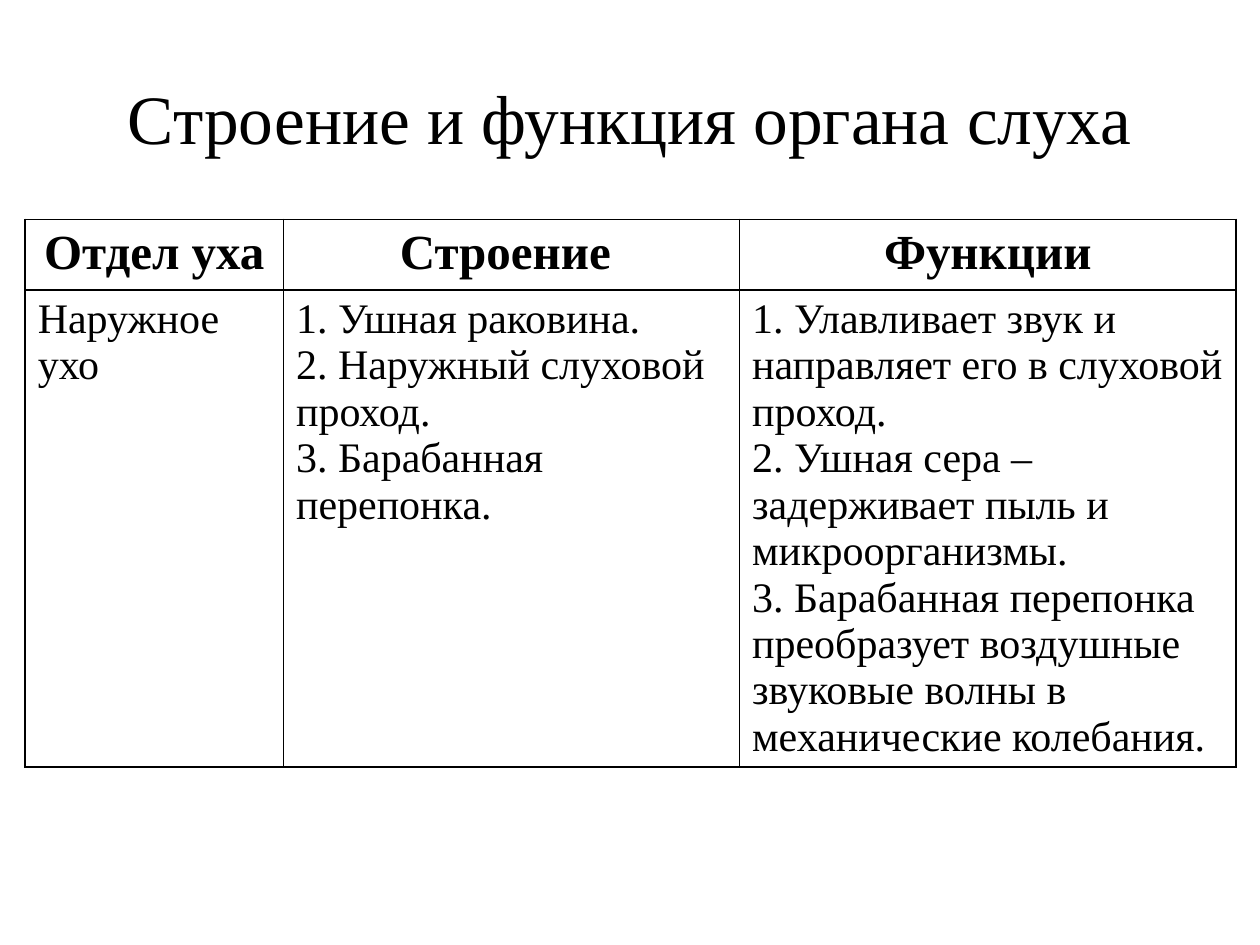
from dataclasses import dataclass

from pptx import Presentation
from pptx import util as u
from pptx.dml import color
from pptx.enum import text
from pptx.oxml import parse_xml
from pptx.oxml.ns import nsdecls


@dataclass(frozen=True)
class Theme:
    """Colours, font and type sizes of the slide."""
    ink: str = "000000"
    paper: str = "FFFFFF"
    font: str = "Times New Roman"
    title: float = 39.6
    head: float = 28
    body: float = 24
    rule: float = 1


THEME = Theme()
WIDTHS = [2.05, 3.62, 3.94]
HEIGHTS = [0.56, 3.78]
HEADS = ["Отдел уха", "Строение ", "Функции"]
OUTER = [
    ["Наружное ухо"],
    ["1. Ушная раковина.\n2. Наружный слуховой проход.\n3. Барабанная перепонка."],
    ["1. Улавливает звук и направляет его в слуховой проход.\n"
     "2. Ушная сера – задерживает пыль и микроорганизмы.",
     "3. Барабанная перепонка преобразует воздушные звуковые волны "
     "в механические колебания."],
]


def write(frame, lines, size, bold=False, align=text.PP_ALIGN.LEFT):
    """Fill a text frame with one styled paragraph per line."""
    for i, line in enumerate(lines):
        para = frame.add_paragraph() if i else frame.paragraphs[0]
        para.text = line
        para.alignment = align
        font = para.font
        font.name, font.size, font.bold = THEME.font, u.Pt(size), bold
        font.color.rgb = color.RGBColor.from_string(THEME.ink)


def frame_cell(cell):
    """Draw thin rules on all four sides of a cell and fill it."""
    props = cell._tc.get_or_add_tcPr()
    for side in ("lnL", "lnR", "lnT", "lnB"):
        props.append(parse_xml(
            f'<a:{side} {nsdecls("a")} w="{u.Pt(THEME.rule)}"><a:solidFill>'
            f'<a:srgbClr val="{THEME.ink}"/></a:solidFill></a:{side}>'))
    cell.fill.solid()
    cell.fill.fore_color.rgb = color.RGBColor.from_string(THEME.paper)


def add_title(slide, words):
    """Place and style the title."""
    title = slide.shapes.title
    title.left, title.top = u.Inches(0.5), u.Inches(0.3)
    title.width, title.height = u.Inches(9), u.Inches(1.25)
    title.text_frame.vertical_anchor = text.MSO_ANCHOR.MIDDLE
    write(title.text_frame, [words], THEME.title, align=text.PP_ALIGN.CENTER)


def add_grid(slide):
    """Add the table of ear parts."""
    grid = slide.shapes.add_table(
        len(HEIGHTS), len(WIDTHS), u.Inches(0.2), u.Inches(1.74),
        u.Inches(sum(WIDTHS)), u.Inches(sum(HEIGHTS))).table
    for row, high in zip(grid.rows, HEIGHTS):
        row.height = u.Inches(high)
    for i, wide in enumerate(WIDTHS):
        grid.columns[i].width = u.Inches(wide)
        head, body = grid.cell(0, i), grid.cell(1, i)
        write(head.text_frame, [HEADS[i]], THEME.head, True, text.PP_ALIGN.CENTER)
        write(body.text_frame, OUTER[i], THEME.body)
        frame_cell(head)
        frame_cell(body)


def main():
    """Build and save the slide."""
    deck = Presentation()
    deck.slide_width, deck.slide_height = u.Inches(10), u.Inches(7.5)
    slide = deck.slides.add_slide(deck.slide_layouts[5])
    add_title(slide, "Строение и функция органа слуха")
    add_grid(slide)
    deck.save("out.pptx")


if __name__ == "__main__":
    main()
